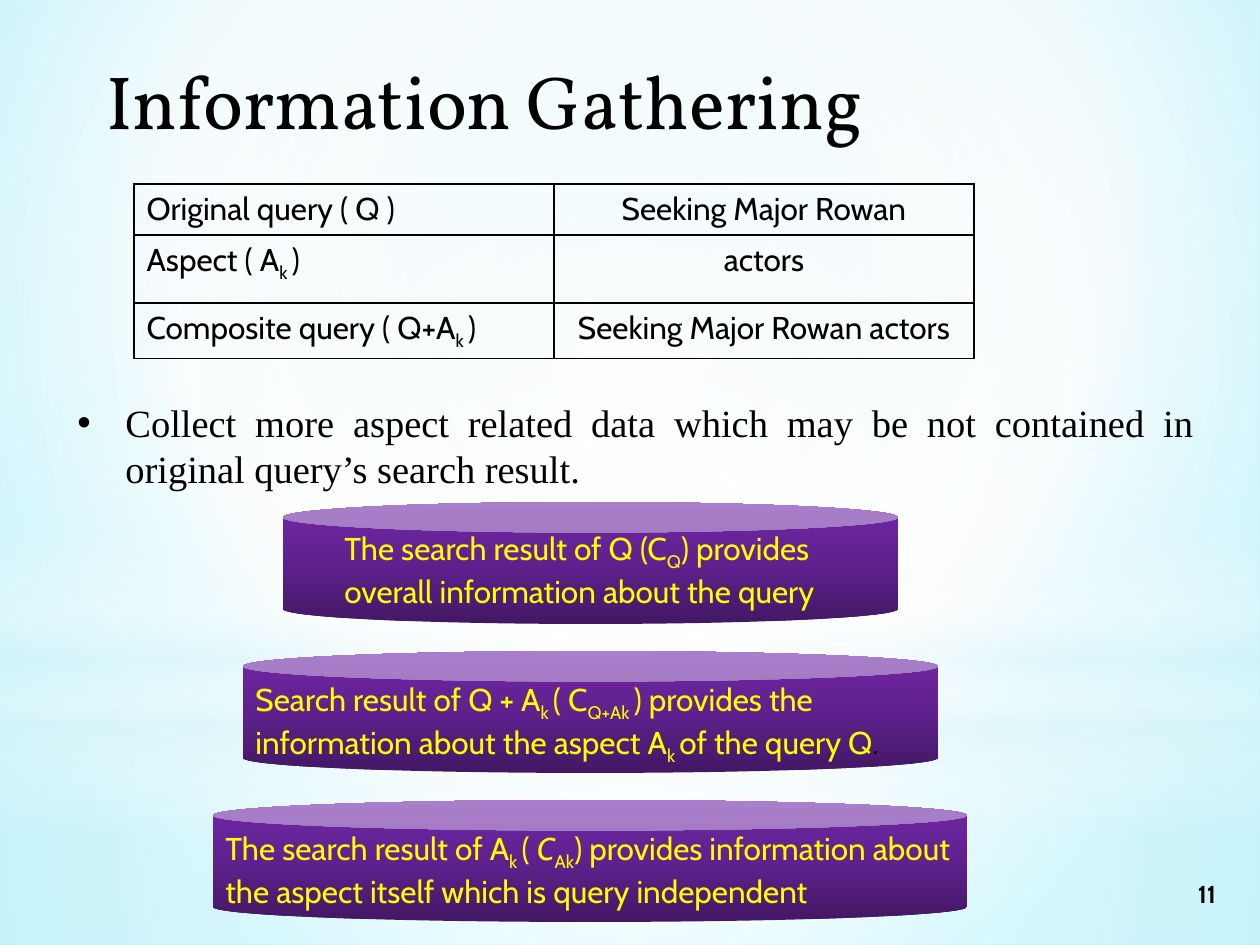
import pptx
import pptx.dml.color
import pptx.enum.shapes
import pptx.enum.text
import pptx.oxml
import pptx.oxml.ns
import pptx.util

SHAPE = pptx.enum.shapes.MSO_SHAPE
ALIGN = pptx.enum.text.PP_ALIGN
ANCHOR = pptx.enum.text.MSO_ANCHOR
qn = pptx.oxml.ns.qn
NS = 'xmlns:a="http://schemas.openxmlformats.org/drawingml/2006/main"'
CENTER = (50, 50, 50, 50)
PURPLE = [(0, "431764"), (50, "5F218E"), (100, "7128A8")]
YELLOW = "FFFF00"


def px(n):
    return round(n * 914400 / 126)


def box(*lengths):
    return [px(n) for n in lengths]


def color(value):
    return pptx.dml.color.RGBColor.from_string(value)


def paint(fill, root, stops, focus=None, angle=0):
    fill.gradient()
    stop_xml = "".join(
        f'<a:gs pos="{pos * 1000}"><a:srgbClr val="{value}">'
        f'<a:alpha val="{(opacity or [100])[0] * 1000}"/></a:srgbClr></a:gs>'
        for pos, value, *opacity in stops)
    if focus:
        sides = " ".join(f'{k}="{v * 1000}"' for k, v in zip("ltrb", focus))
        shade = f'<a:path path="circle"><a:fillToRect {sides}/></a:path>'
    else:
        shade = f'<a:lin ang="{angle * 60000}" scaled="0"/>'
    old = next(root.iter(qn("a:gradFill")))
    old.getparent().replace(old, pptx.oxml.parse_xml(
        f'<a:gradFill {NS} rotWithShape="1"><a:gsLst>{stop_xml}</a:gsLst>{shade}</a:gradFill>'))


def add_gradient_shape(s, kind, bounds, stops, focus=None, angle=0):
    sp = s.shapes.add_shape(kind, *box(*bounds))
    sp.shadow.inherit = False
    sp.line.fill.background()
    paint(sp.fill, sp._element, stops, focus, angle)
    return sp


def add_runs(p, parts, size, font="Cabin", ink="000000", bold=False):
    for part in parts:
        text, style = (part, "") if isinstance(part, str) else part
        r = p.add_run()
        r.text = text
        r.font.size = pptx.util.Pt(size)
        r.font.name = font
        r.font.bold = bold
        r.font.italic = style == "italic"
        r.font.color.rgb = color("000000" if style == "black" else ink)
        if style == "sub":
            r._r.get_or_add_rPr().set("baseline", "-25000")


def add_text(s, bounds, paragraphs, size, align=ALIGN.LEFT, anchor=ANCHOR.TOP, **style):
    tf = s.shapes.add_textbox(*box(*bounds)).text_frame
    tf.word_wrap = True
    tf.vertical_anchor = anchor
    for i, parts in enumerate(paragraphs):
        p = tf.add_paragraph() if i else tf.paragraphs[0]
        p.alignment = align
        add_runs(p, parts, size, **style)
    return tf


def add_backdrop(s, w, h):
    paint(s.background.fill, s._element,
          [(0, "CAF0F6"), (60, "FFFFFF"), (100, "79EDFF")], (20, 10, 20, 60))
    horizon = 703
    add_gradient_shape(s, SHAPE.RECTANGLE, (0, horizon, w, h - horizon),
                       [(0, "FFFFFF", 91), (37, "FFFFFF", 76), (100, "DBF5F9", 79)], CENTER)
    add_gradient_shape(s, SHAPE.RECTANGLE, (0, 0, w, horizon),
                       [(0, "FFFFFF", 89), (48, "FFFFFF", 62), (100, "DBF5F9", 79)], CENTER)
    add_gradient_shape(s, SHAPE.RECTANGLE, (0, 519, w, 315),
                       [(0, "FFFFFF", 0), (29, "FFFFFF", 30), (45, "DBF5F9", 40),
                        (55, "FFFFFF", 26), (65, "DBF5F9", 60), (100, "FFFFFF", 0)], angle=90)
    add_gradient_shape(s, SHAPE.OVAL, (0, 220, w, horizon),
                       [(0, "FFFFFF", 100), (56, "FFFFFF", 0)], CENTER)


def add_query_table(s, x, y, w, row_heights, rows):
    table = s.shapes.add_table(len(rows), 2, *box(x, y, w, sum(row_heights))).table
    table.first_row = table.horz_banding = False
    for col in table.columns:
        col.width = px(w / 2)
    for row, height, contents in zip(table.rows, row_heights, rows):
        row.height = px(height)
        for cell, parts, align in zip(row.cells, contents, (ALIGN.LEFT, ALIGN.CENTER)):
            p = cell.text_frame.paragraphs[0]
            p.alignment = align
            add_runs(p, parts, 18)
            tcPr = cell._tc.get_or_add_tcPr()
            for side in "LRTB":
                tcPr.append(pptx.oxml.parse_xml(
                    f'<a:ln{side} {NS} w="12700"><a:solidFill><a:srgbClr val="000000"/>'
                    f'</a:solidFill></a:ln{side}>'))
            cell.fill.background()


def add_bullet(s, x, y, w, h, text):
    tf = add_text(s, (x, y, w, h), [[text]], 22, ALIGN.JUSTIFY, font="Times New Roman")
    pPr = tf.paragraphs[0]._p.get_or_add_pPr()
    pPr.set("marL", str(px(48)))
    pPr.set("indent", str(px(-48)))
    pPr.append(pptx.oxml.parse_xml(f'<a:buFont {NS} typeface="Arial"/>'))
    pPr.append(pptx.oxml.parse_xml(f'<a:buChar {NS} char="•"/>'))


def add_cylinder(s, x, y, w, h, label, paragraphs):
    dx, dy, label_w = label
    sp = add_gradient_shape(s, SHAPE.CAN, (x, y, w, h), PURPLE, angle=270)
    sp.adjustments[0] = 0.25
    add_text(s, (x + dx, y + dy, label_w, 89), paragraphs, 18, ink=YELLOW)


def main():
    prs = pptx.Presentation()
    w, h = 1260, 945
    prs.slide_width, prs.slide_height = box(w, h)
    s = prs.slides.add_slide(prs.slide_layouts[6])
    k = ("k ", "sub")
    query = "Seeking Major Rowan"

    add_backdrop(s, w, h)
    add_text(s, (1145, 869, 124, 50), [["11"]], 14, ALIGN.CENTER, ANCHOR.MIDDLE, bold=True)
    add_text(s, (94, 48, 998, 117), [["Information Gathering"]], 43, font="Vollkorn")
    add_query_table(s, 134, 184, 840, (51, 68, 55), [
        (["Original query ( Q )"], [query]),
        (["Aspect ( A", k, ")"], ["actors"]),
        (["Composite query ( Q+A", k, ")"], [f"{query} actors"]),
    ])
    add_bullet(s, 65, 393, 1141, 104,
               "Collect more aspect related data which may be not contained in "
               "original query’s search result.")

    cylinders = [
        (283, 615, (49, 21, 566),
         [["The search result of Q (C", ("Q", "sub"), ") provides"],
          ["overall information about the query"]]),
        (243, 695, (0, 23, 714),
         [["Search result of Q + A", k, "( C", ("Q+Ak ", "sub"),
           ") provides the information about the aspect A", k,
           "of the query Q", (".", "black")]]),
        (213, 754, (0, 23, 774),
         [["The search result of A", k, "( ", ("C", "italic"), ("Ak", "sub"),
           ") provides information about the aspect itself which is query independent"]]),
    ]
    for i, (x, width, label, paragraphs) in enumerate(cylinders):
        add_cylinder(s, x, 502 + 149 * i, width, 122, label, paragraphs)
    prs.save("out.pptx")


if __name__ == "__main__":
    main()
